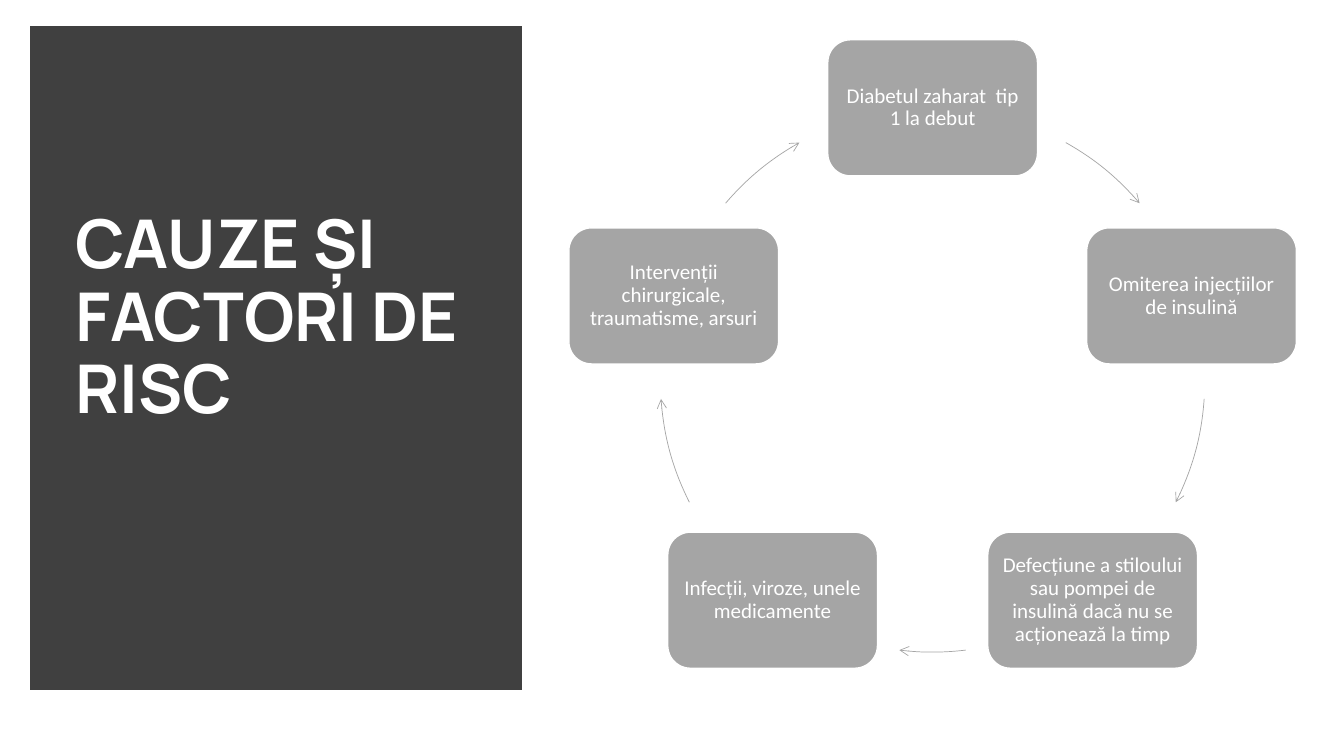
import math
import pptx
import pptx.dml.color
import pptx.enum.shapes
import pptx.enum.text
import pptx.oxml
import pptx.oxml.ns
import pptx.util

PX = 9144
HUES = {"panel": "404040", "node": "A5A5A5", "white": "FFFFFF"}
MID_X, MID_Y, RADIUS = 925, 377, 270
NODE_W, NODE_H = 208, 135
CAUSES = [
    "Diabetul zaharat  tip 1 la debut",
    "Omiterea injecțiilor de insulină",
    "Defecțiune a stiloului sau pompei de insulină dacă nu se acționează la timp",
    "Infecții, viroze, unele medicamente",
    "Intervenții chirurgicale, traumatisme, arsuri",
]
ARCS = [(29.3, 49.5), (94, 116.7), (173, 187), (243.3, 266), (310.5, 330.7)]
KINDS = pptx.enum.shapes.MSO_SHAPE
ALIGN = pptx.enum.text.PP_ALIGN


def hue(name):
    return pptx.dml.color.RGBColor.from_string(HUES[name])


def apply(item, values):
    for name, value in values.items():
        setattr(item, name, value)


def add_edge(shape, tag):
    edge = shape.element.spPr.find(pptx.oxml.ns.qn("a:ln"))
    edge.append(pptx.oxml.parse_xml(f'<a:{tag} {pptx.oxml.ns.nsdecls("a")}/>'))
    return edge[-1]


def add_shape(slide, kind, box, fill, line, width):
    shape = slide.shapes.add_shape(kind, *(round(n * PX) for n in box))
    shape.shadow.inherit = False
    if fill:
        shape.fill.solid()
        shape.fill.fore_color.rgb = hue(fill)
    else:
        shape.fill.background()
    shape.line.color.rgb = hue(line)
    shape.line.width = pptx.util.Pt(width)
    add_edge(shape, "miter").set("lim", "800000")
    return shape


def set_text(shape, text, align, insets, font):
    frame = shape.text_frame
    frame.text = text
    apply(frame, {
        "word_wrap": True,
        "auto_size": pptx.enum.text.MSO_AUTO_SIZE.NONE,
        "vertical_anchor": pptx.enum.text.MSO_ANCHOR.MIDDLE,
    })
    sides = ("left", "top", "right", "bottom")
    apply(frame, {f"margin_{side}": n * PX for side, n in zip(sides, insets)})
    para = frame.paragraphs[0]
    apply(para, {"alignment": align, "line_spacing": 0.9})
    apply(para.runs[0].font, font)
    para.runs[0].font.color.rgb = hue("white")


def add_title(slide):
    title = slide.shapes.title
    box = {"left": 65, "top": 70, "width": 416, "height": 575}
    apply(title, {side: n * PX for side, n in box.items()})
    set_text(title, "CAUZE ȘI FACTORI DE RISC", ALIGN.LEFT, (10, 5, 10, 86),
             {"name": "Manrope", "size": pptx.util.Pt(48), "bold": True})
    panel = add_shape(slide, KINDS.RECTANGLE, (37, 33, 474, 645), "panel", "panel", 10)
    title.element.addprevious(panel.element)


def add_node(slide, text, turn):
    angle = math.radians(turn)
    left = MID_X + RADIUS * math.sin(angle) - NODE_W / 2
    top = MID_Y - RADIUS * math.cos(angle) - NODE_H / 2
    node = add_shape(slide, KINDS.ROUNDED_RECTANGLE,
                     (left, top, NODE_W, NODE_H), "node", "white", 1)
    set_text(node, text, ALIGN.CENTER, (6, 6, 6, 6),
             {"name": "Calibri", "size": pptx.util.Pt(15)})


def add_arc(slide, start, end):
    box = (MID_X - RADIUS, MID_Y - RADIUS, 2 * RADIUS, 2 * RADIUS)
    arc = add_shape(slide, KINDS.ARC, box, None, "node", 0.5)
    for index, turn in enumerate((start, end)):
        arc.adjustments[index] = (turn - 90) % 360 * 0.6
    add_edge(arc, "tailEnd").set("type", "arrow")


def main():
    deck = pptx.Presentation()
    apply(deck, {"slide_width": 1333 * PX, "slide_height": 750 * PX})
    slide = deck.slides.add_slide(deck.slide_layouts[5])
    add_title(slide)
    step = 360 / len(CAUSES)
    for index, (cause, span) in enumerate(zip(CAUSES, ARCS)):
        add_node(slide, cause, index * step)
        add_arc(slide, *span)
    deck.save("out.pptx")


if __name__ == "__main__":
    main()
